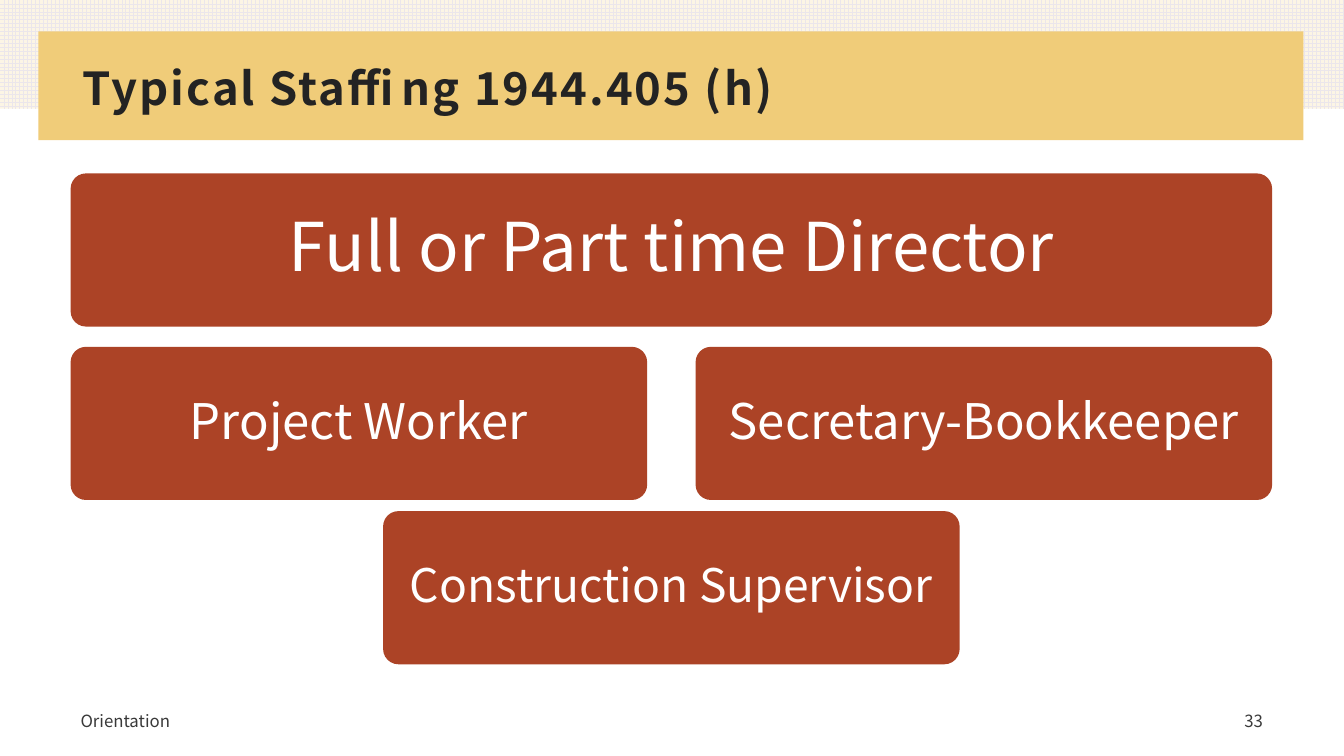
from pptx import Presentation
from pptx.dml.color import RGBColor
from pptx.enum.dml import MSO_PATTERN
from pptx.enum.shapes import MSO_SHAPE
from pptx.enum.text import MSO_ANCHOR, PP_ALIGN
from pptx.util import Cm, Pt

FONT = "Noto Sans CJK JP"
COLORS = {
    "grid": "EBE6EB",
    "paper": "FCF5E5",
    "banner": "F0CC79",
    "title": "232323",
    "footer": "393939",
    "role": "AC4326",
    "role_text": "FFFFFF",
}
SLIDE_W, SLIDE_H = 33.87, 19.05
LEFT, CHART_W = 1.78, 30.28
ROLE_W, ROLE_H = 14.53, 3.86
RIGHT_COL = LEFT + CHART_W - ROLE_W
MIDDLE_COL = (LEFT + RIGHT_COL) / 2


def color(name):
    return RGBColor.from_string(COLORS[name])


def write(s, text, size, color_name, align=PP_ALIGN.LEFT, inset=None):
    """Set vertically centred text in a shape and return its run."""
    tf = s.text_frame
    tf.word_wrap = True
    tf.vertical_anchor = MSO_ANCHOR.MIDDLE
    if inset is not None:
        tf.margin_left = tf.margin_right = Cm(inset)
        tf.margin_top = tf.margin_bottom = Cm(inset)
    tf.text = text
    p = tf.paragraphs[0]
    p.alignment = align
    r = p.runs[0]
    r.font.name = FONT
    r.font.size = Pt(size)
    r.font.color.rgb = color(color_name)
    return r


def add_block(slide, shape_type, x, y, w, h, fill):
    s = slide.shapes.add_shape(shape_type, Cm(x), Cm(y), Cm(w), Cm(h))
    s.shadow.inherit = False
    s.fill.solid()
    s.fill.fore_color.rgb = color(fill)
    s.line.fill.background()
    return s


def add_grid_band(slide):
    s = add_block(slide, MSO_SHAPE.RECTANGLE, 0, 0, SLIDE_W, 2.74, "paper")
    s.fill.patterned()
    s.fill.pattern = MSO_PATTERN.LARGE_GRID
    s.fill.fore_color.rgb = color("grid")
    s.fill.back_color.rgb = color("paper")


def add_title(slide, text):
    add_block(slide, MSO_SHAPE.RECTANGLE, 0.97, 0.79, 31.88, 2.74, "banner")
    s = slide.shapes.add_textbox(Cm(LEFT), Cm(1.32), Cm(30.3), Cm(1.9))
    r = write(s, text, 32.4, "title", inset=0.3)
    s.text_frame.margin_bottom = Cm(0.25)
    s.text_frame.paragraphs[0].line_spacing = 0.9
    r.font.bold = True
    r._r.get_or_add_rPr().set("spc", "150")


def add_role(slide, text, x, y, size, inset, w=ROLE_W):
    s = add_block(slide, MSO_SHAPE.ROUNDED_RECTANGLE, x, y, w, ROLE_H, "role")
    s.adjustments[0] = 0.1
    write(s, text, size, "role_text", PP_ALIGN.CENTER, inset)
    s.text_frame.paragraphs[0].line_spacing = 0.9


def add_footer(slide, text, x, w, align):
    s = slide.shapes.add_textbox(Cm(x), Cm(17.65), Cm(w), Cm(1.02))
    write(s, text, 12, "footer", align)


def main():
    prs = Presentation()
    prs.slide_width, prs.slide_height = Cm(SLIDE_W), Cm(SLIDE_H)
    slide = prs.slides.add_slide(prs.slide_layouts[6])
    add_grid_band(slide)
    add_title(slide, "Typical Staffing 1944.405 (h)")
    add_role(slide, "Full or Part time Director", LEFT, 4.37, 48, 0.51, CHART_W)
    add_role(slide, "Project Worker", LEFT, 8.74, 35, 0.38)
    add_role(slide, "Secretary-Bookkeeper", RIGHT_COL, 8.74, 35, 0.38)
    add_role(slide, "Construction Supervisor", MIDDLE_COL, 12.88, 33, 0.35)
    add_footer(slide, "Orientation", LEFT, 17.48, PP_ALIGN.LEFT)
    add_footer(slide, "33", 29.74, 2.34, PP_ALIGN.RIGHT)
    prs.save("out.pptx")


if __name__ == "__main__":
    main()
